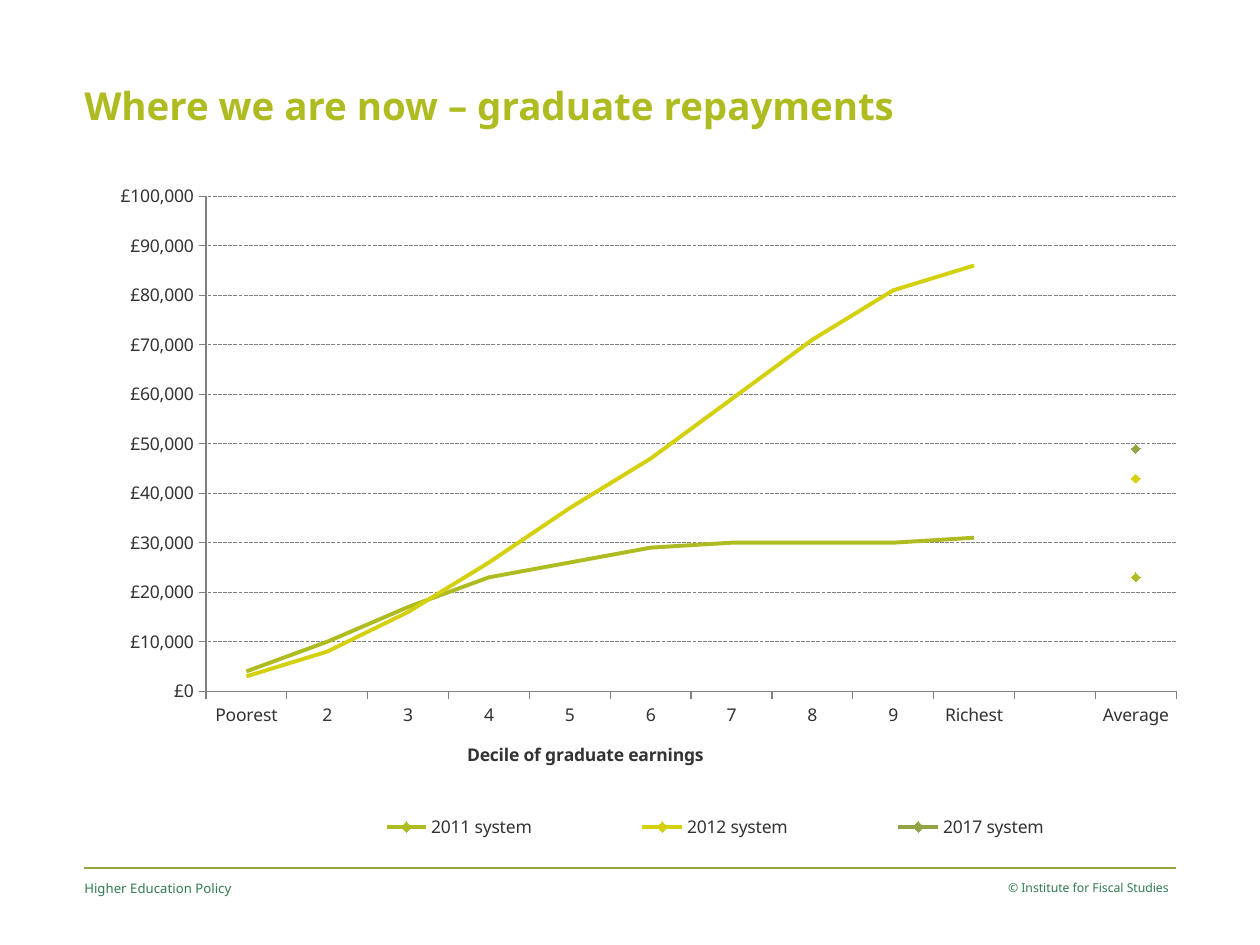
from lxml import etree
from pptx import Presentation
from pptx import util as u
from pptx.chart import data as chart_data
from pptx.dml import color
from pptx.enum import chart as ec, dml, shapes, text
from pptx.oxml import ns

FONT = "Noto Sans"
LIME, YELLOW, OLIVE = "AFBC21", "D4D00E", "93A445"
GREEN, INK, GREY = "317B52", "333333", "808080"


def rgb(value):
    return color.RGBColor.from_string(value)


def child(parent, tag, **attributes):
    return etree.SubElement(parent, ns.qn(tag), attributes)


def place(parent, index, inner=False, **fractions):
    for old in parent.findall(ns.qn("c:layout")):
        parent.remove(old)
    layout = etree.Element(ns.qn("c:layout"))
    manual = child(layout, "c:manualLayout")
    if inner:
        child(manual, "c:layoutTarget", val="inner")
    for side in ("x", "y"):
        child(manual, f"c:{side}Mode", val="edge")
    for name, fraction in fractions.items():
        child(manual, f"c:{name}", val=str(fraction))
    parent.insert(index, layout)


class Deck:
    """Holds the style and the current slide, and draws each kind of element."""

    def __init__(self, width, height):
        self.prs = Presentation()
        self.prs.slide_width, self.prs.slide_height = u.Cm(width), u.Cm(height)
        self.slide = self.prs.slides.add_slide(self.prs.slide_layouts[6])

    def style(self, font, size, ink, bold=False):
        font.name, font.size, font.bold = FONT, u.Pt(size), bold
        font.color.rgb = rgb(ink)

    def label(self, words, box, size, ink, bold=False, align=text.PP_ALIGN.LEFT):
        frame = self.slide.shapes.add_textbox(*map(u.Cm, box)).text_frame
        frame.word_wrap = True
        frame.margin_left = frame.margin_right = frame.margin_top = frame.margin_bottom = 0
        paragraph = frame.paragraphs[0]
        paragraph.alignment = align
        run = paragraph.add_run()
        run.text = words
        self.style(run.font, size, ink, bold)

    def rule(self, left, right, y, ink):
        line = self.slide.shapes.add_connector(
            shapes.MSO_CONNECTOR.STRAIGHT, u.Cm(left), u.Cm(y), u.Cm(right), u.Cm(y))
        line.line.color.rgb, line.line.width = rgb(ink), u.Pt(0.75)
        child(line._element.spPr, "a:effectLst")

    def line_chart(self, box, categories, series, axis_name):
        data = chart_data.CategoryChartData(number_format='"£"#,##0')
        data.categories = categories
        for name, values, _, _ in series:
            data.add_series(name, values)
        chart = self.slide.shapes.add_chart(
            ec.XL_CHART_TYPE.LINE_MARKERS, *map(u.Cm, box), data).chart
        chart.has_title = False
        self.style(chart.font, 10, INK)
        chart.plots[0].vary_by_categories = False
        place(chart._chartSpace.chart.plotArea, 0, inner=True, x=0.124, y=0.072, w=0.85, h=0.693)
        for drawn, (_, _, ink, marked) in zip(chart.plots[0].series, series):
            self.series(drawn, ink, marked)
        self.axes(chart, axis_name)
        self.legend(chart, [i for i, item in enumerate(series) if not item[3]])

    def series(self, drawn, ink, marked):
        drawn.smooth = False
        drawn.format.line.color.rgb, drawn.format.line.width = rgb(ink), u.Pt(2.25)
        marker = drawn.marker
        if not marked:
            marker.style = ec.XL_MARKER_STYLE.NONE
            return
        marker.style, marker.size = ec.XL_MARKER_STYLE.DIAMOND, 5
        marker.format.fill.solid()
        marker.format.fill.fore_color.rgb = rgb(ink)
        marker.format.line.color.rgb = rgb(ink)

    def axes(self, chart, axis_name):
        deciles, pounds = chart.category_axis, chart.value_axis
        for axis in (deciles, pounds):
            axis.major_tick_mark = ec.XL_TICK_MARK.OUTSIDE
            axis.minor_tick_mark = ec.XL_TICK_MARK.NONE
            axis.format.line.color.rgb, axis.format.line.width = rgb(GREY), u.Pt(0.75)
            self.style(axis.tick_labels.font, 10, INK)
        deciles.tick_label_position = ec.XL_TICK_LABEL_POSITION.LOW
        pounds.minimum_scale, pounds.maximum_scale, pounds.major_unit = 0, 100000, 10000
        pounds.tick_labels.number_format = '"£"#,##0'
        pounds.tick_labels.number_format_is_linked = False
        grid = pounds.major_gridlines.format.line
        grid.color.rgb, grid.width = rgb(GREY), u.Pt(0.75)
        grid.dash_style = dml.MSO_LINE.SQUARE_DOT
        run = deciles.axis_title.text_frame.paragraphs[0].add_run()
        run.text = axis_name
        self.style(run.font, 10, INK, True)
        place(deciles.axis_title._element, 1, x=0.35, y=0.83)

    def legend(self, chart, hidden):
        chart.has_legend = True
        legend = chart.legend
        legend.position = ec.XL_LEGEND_POSITION.BOTTOM
        legend.include_in_layout = False
        self.style(legend.font, 10, INK)
        place(legend._element, 1, x=0.19, y=0.92, w=0.76, h=0.07)
        for offset, index in enumerate(hidden, 1):
            entry = etree.Element(ns.qn("c:legendEntry"))
            child(entry, "c:idx", val=str(index))
            child(entry, "c:delete", val="1")
            legend._element.insert(offset, entry)


def main():
    deck = Deck(25.4, 19.05)
    left, right, footer_top = 1.7, 23.7, 17.75
    deck.rule(left, right, 17.5, OLIVE)
    deck.label("Where we are now – graduate repayments", (left, 1.65, 18.2, 1.12), 22, LIME, True)
    deck.label("© Institute for Fiscal Studies", (19.16, footer_top, 4.4, 1), 7, GREEN,
               align=text.PP_ALIGN.RIGHT)
    deck.label("Higher Education Policy", (left, footer_top, 8.05, 1), 7.5, GREEN)

    deciles = ["Poorest", *map(str, range(2, 10)), "Richest"]
    repaid_2011 = [4000, 10000, 17000, 23000, 26000, 29000, 30000, 30000, 30000, 31000]
    repaid_2012 = [3000, 8000, 16000, 26000, 37000, 47000, 59000, 71000, 81000, 86000]
    averages = [("2011 system", 23000, LIME), ("2012 system", 43000, YELLOW),
                ("2017 system", 49000, OLIVE)]
    series = [("Series 1", repaid_2011 + [None] * 2, LIME, False),
              ("Series 2", repaid_2012 + [None] * 2, YELLOW, False)]
    series += [(name, [None] * 11 + [average], ink, True) for name, average, ink in averages]
    deck.line_chart((1.3, 2.92, 23.01, 14.4), deciles + ["", "Average"], series,
                    "Decile of graduate earnings")
    deck.prs.save("out.pptx")


if __name__ == "__main__":
    main()
